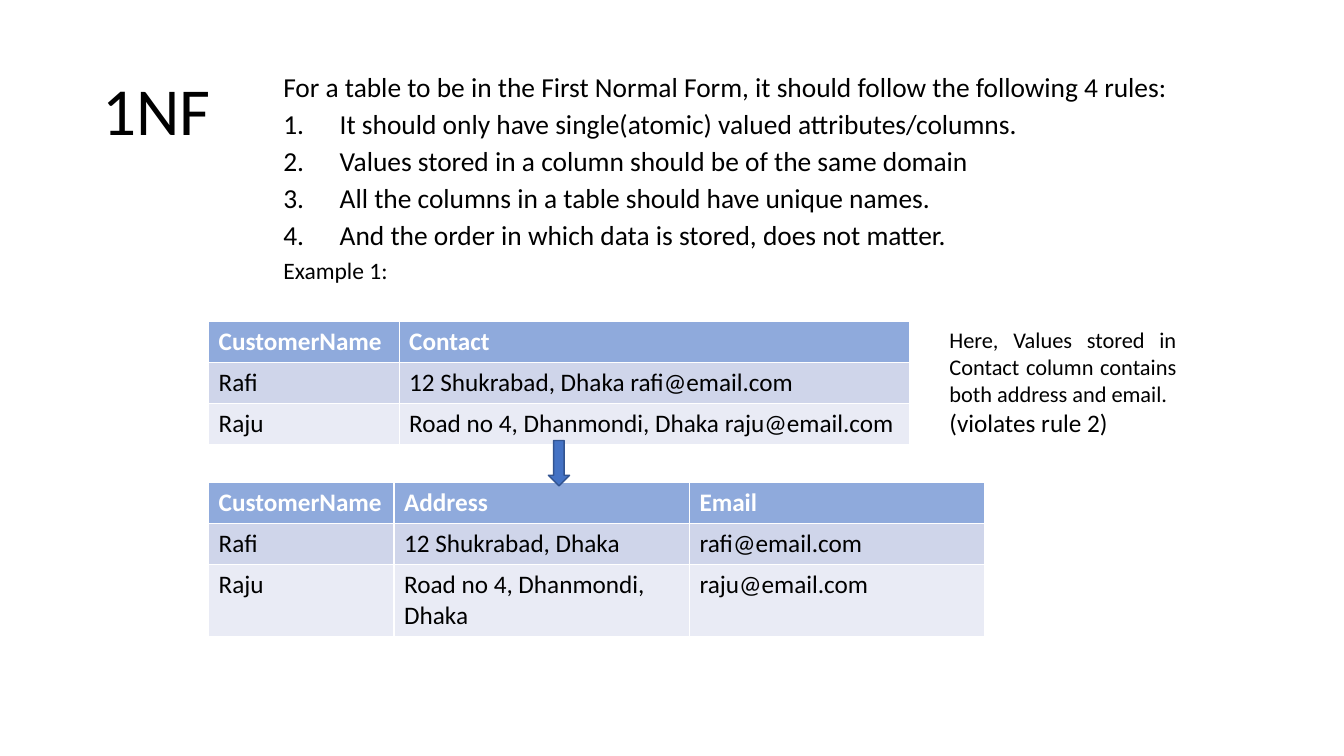
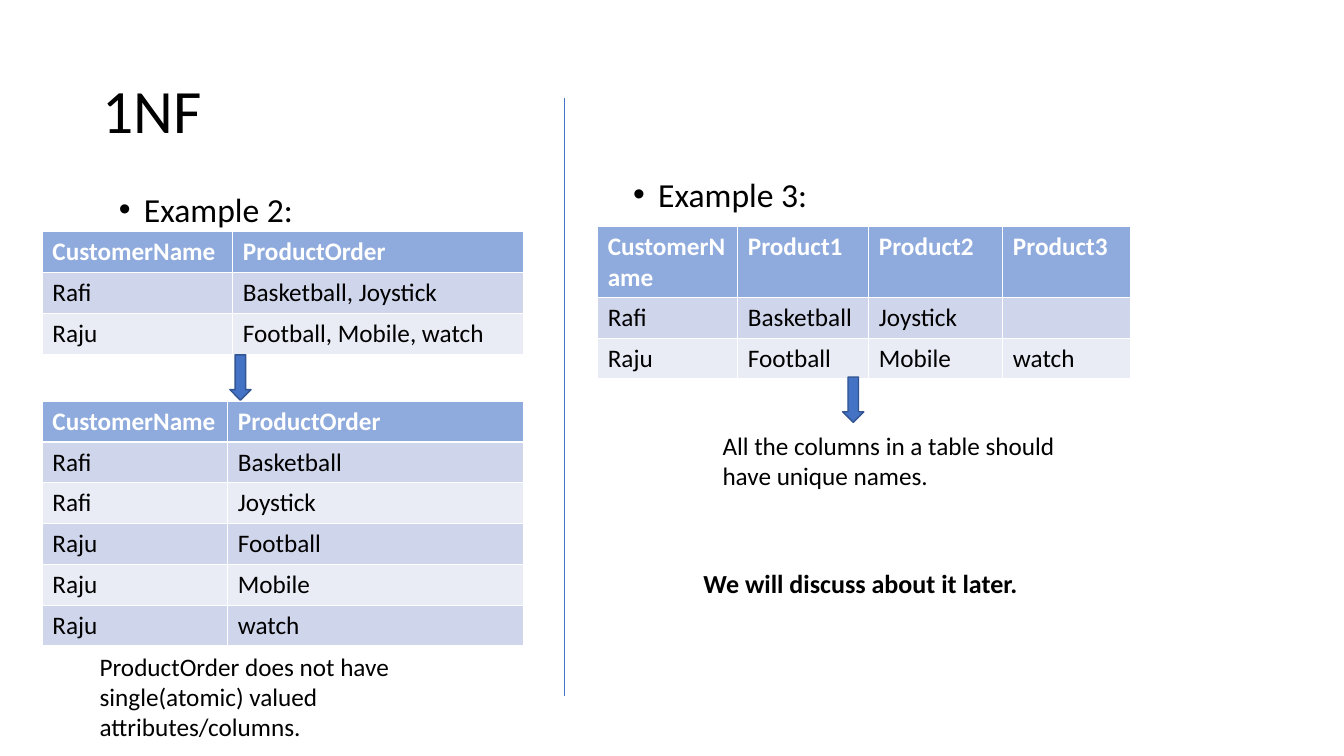
from typing import NamedTuple

from lxml import etree
from pptx import Presentation
from pptx import util as u
from pptx.dml.color import RGBColor
from pptx.enum import shapes, text
from pptx.oxml.ns import qn

BLACK = RGBColor(0x00, 0x00, 0x00)
WHITE = RGBColor(0xFF, 0xFF, 0xFF)
BLUE = RGBColor(0x44, 0x72, 0xC4)
DARK_BLUE = RGBColor(0x32, 0x54, 0x91)
HEADER_FILL = RGBColor(0x8F, 0xAA, 0xDC)
BAND_FILLS = (RGBColor(0xE9, 0xEB, 0xF5), RGBColor(0xCF, 0xD5, 0xEA))
FONT = "Calibri"

COLUMNS, ROWS = 80, 45
SLIDE_WIDTH, SLIDE_HEIGHT = u.Inches(13.33), u.Inches(7.5)
TABLE_ROW = 2.43
NAME_WIDE, NAME_NARROW, DETAIL = 11.34, 11.04, 17.58
ARROW_SIZE = (1.26, 2.7)
HEADING_SIZE = (20.4, 2.76)


def across(columns):
    """Turn grid columns into a length."""
    return u.Emu(round(SLIDE_WIDTH * columns / COLUMNS))


def down(rows):
    """Turn grid rows into a length."""
    return u.Emu(round(SLIDE_HEIGHT * rows / ROWS))


class Box(NamedTuple):
    """A region measured in grid columns and rows."""

    left: float
    top: float
    width: float
    height: float

    def inner(self, left, top, width, height):
        """Return a box placed relative to this one."""
        return Box(self.left + left, self.top + top, width, height)

    def lengths(self):
        """Return left, top, width and height as lengths."""
        return across(self.left), down(self.top), across(self.width), down(self.height)


TITLE_BOX = Box(5.5, 2.4, 69, 8.7)


def set_bullet(paragraph, bullet, indent):
    """Give a paragraph a character, automatic number or no bullet."""
    properties = paragraph._p.get_or_add_pPr()
    properties.set("marL", str(u.Inches(indent)))
    properties.set("indent", str(-u.Inches(indent)))
    if bullet == "number":
        etree.SubElement(properties, qn("a:buFont"), typeface="+mj-lt")
        etree.SubElement(properties, qn("a:buAutoNum"), type="arabicPeriod")
    elif bullet:
        etree.SubElement(properties, qn("a:buFont"), typeface="Arial")
        etree.SubElement(properties, qn("a:buChar"), char=bullet)
    else:
        etree.SubElement(properties, qn("a:buNone"))


def write(frame, words, size=18, color=BLACK, bold=False, align=text.PP_ALIGN.LEFT,
          spacing=1.0, before=0, bullet=None, indent=0):
    """Add one formatted paragraph to a text frame."""
    paragraph = frame.paragraphs[0]
    if paragraph.runs:
        paragraph = frame.add_paragraph()
    set_bullet(paragraph, bullet, indent)
    paragraph.alignment = align
    paragraph.line_spacing = spacing
    paragraph.space_before = u.Pt(before)
    run = paragraph.add_run()
    run.text = words
    run.font.name = FONT
    run.font.size = u.Pt(size)
    run.font.bold = bold
    run.font.color.rgb = color


def place(placeholder, box):
    """Move a placeholder to a box and return its text frame."""
    placeholder.left, placeholder.top, placeholder.width, placeholder.height = box.lengths()
    frame = placeholder.text_frame
    frame.word_wrap = True
    frame.auto_size = text.MSO_AUTO_SIZE.NONE
    return frame


def add_text_frame(slide, box):
    """Add a wrapping text box and return its text frame."""
    frame = slide.shapes.add_textbox(*box.lengths()).text_frame
    frame.word_wrap = True
    return frame


def add_titled_slide(presentation, title, size):
    """Add a slide with a formatted title."""
    slide = presentation.slides.add_slide(presentation.slide_layouts[1])
    frame = place(slide.shapes.title, TITLE_BOX)
    frame.vertical_anchor = text.MSO_ANCHOR.MIDDLE
    write(frame, title, size=size, spacing=0.9)
    return slide


def add_data_table(slide, region, left, top, widths, rows):
    """Add a banded table with a header row."""
    box = region.inner(left, top, sum(widths), TABLE_ROW * len(rows))
    table = slide.shapes.add_table(len(rows), len(widths), *box.lengths()).table
    for column, width in zip(table.columns, widths):
        column.width = across(width)
    for row_index, values in enumerate(rows):
        header = row_index == 0
        table.rows[row_index].height = down(TABLE_ROW)
        for column_index, value in enumerate(values):
            cell = table.cell(row_index, column_index)
            cell.fill.solid()
            cell.fill.fore_color.rgb = HEADER_FILL if header else BAND_FILLS[row_index % 2]
            if value:
                write(cell.text_frame, value, color=WHITE if header else BLACK, bold=header)


def add_down_arrow(slide, region, left, top):
    """Add a block arrow that points down."""
    box = region.inner(left, top, *ARROW_SIZE)
    arrow = slide.shapes.add_shape(shapes.MSO_SHAPE.DOWN_ARROW, *box.lengths())
    arrow.shadow.inherit = False
    arrow.fill.solid()
    arrow.fill.fore_color.rgb = BLUE
    arrow.line.color.rgb = DARK_BLUE
    arrow.line.width = u.Pt(1)


def add_divider(slide, column, top, bottom):
    """Add a vertical line between two regions."""
    line = slide.shapes.add_connector(shapes.MSO_CONNECTOR.STRAIGHT, across(column), down(top),
                                      across(column), down(bottom))
    line.line.color.rgb = BLUE
    line.line.width = u.Pt(1)
    etree.SubElement(line._element.spPr, qn("a:effectLst"))


def write_heading(frame, words):
    """Write the bulleted heading of an example."""
    write(frame, words, size=24, spacing=0.8, bullet="•", indent=0.25)


def fill_rules(slide, box):
    """Write the numbered rules of the first normal form."""
    frame = place(slide.placeholders[1], box)
    write(frame, "For a table to be in the First Normal Form, it should follow the following 4 rules:",
          size=19.6, spacing=0.7)
    for rule in ("It should only have single(atomic) valued attributes/columns.",
                 "Values stored in a column should be of the same domain",
                 "All the columns in a table should have unique names.",
                 "And the order in which data is stored, does not matter."):
        write(frame, rule, size=19.6, spacing=0.7, before=10, bullet="number", indent=0.56)
    write(frame, "Example 1:", size=16.8, spacing=0.7, before=10)


def fill_contact_example(slide, region):
    """Show a contact column split into address and email."""
    add_data_table(slide, region, 0, 0, (NAME_WIDE, 30.36), (
        ("CustomerName", "Contact"),
        ("Rafi", "12 Shukrabad, Dhaka rafi@email.com"),
        ("Raju", "Road no 4, Dhanmondi, Dhaka raju@email.com")))
    add_data_table(slide, region, 0, 9.6, (NAME_NARROW, DETAIL, DETAIL), (
        ("CustomerName", "Address", "Email"),
        ("Rafi", "12 Shukrabad, Dhaka", "rafi@email.com"),
        ("Raju", "Road no 4, Dhanmondi, Dhaka", "raju@email.com")))
    add_down_arrow(slide, region, 20.22, 7.08)
    note = add_text_frame(slide, region.inner(43.5, 0, 14.7, 7.26))
    write(note, "Here, Values stored in Contact column contains both address and email.",
          size=16, align=text.PP_ALIGN.JUSTIFY)
    write(note, "(violates rule 2)")


def fill_order_example(slide, region):
    """Show product orders split into single values."""
    write_heading(add_text_frame(slide, region.inner(3.96, 0, *HEADING_SIZE)), "Example 2:")
    header = ("CustomerName", "ProductOrder")
    add_data_table(slide, region, 0, 2.4, (NAME_WIDE, 17.28), (
        header,
        ("Rafi", "Basketball, Joystick"),
        ("Raju", "Football, Mobile, watch")))
    add_data_table(slide, region, 0, 12.48, (NAME_NARROW, DETAIL), (
        header,
        ("Rafi", "Basketball"),
        ("Rafi", "Joystick"),
        ("Raju", "Football"),
        ("Raju", "Mobile"),
        ("Raju", "watch")))
    add_down_arrow(slide, region, 11.16, 9.72)
    note = add_text_frame(slide, region.inner(2.82, 27.06, 20.58, 6.06))
    write(note, "ProductOrder does not have single(atomic) valued attributes/columns.")


def fill_column_example(slide, region):
    """Show a table with one column for each product."""
    write_heading(place(slide.placeholders[1], region.inner(1.5, 0, *HEADING_SIZE)), "Example 3:")
    add_data_table(slide, region, 0, 3, (8.34, 7.8, 7.98, 7.62), (
        ("CustomerName", "Product1", "Product2", "Product3"),
        ("Rafi", "Basketball", "Joystick", ""),
        ("Raju", "Football", "Mobile", "watch")))
    add_down_arrow(slide, region, 14.58, 11.94)
    note = add_text_frame(slide, region.inner(6.84, 14.82, 21.18, 4.26))
    write(note, "All the columns in a table should have unique names.")
    closing = add_text_frame(slide, region.inner(5.7, 23.52, *HEADING_SIZE))
    write(closing, "We will discuss about it later.", size=18.6, bold=True, spacing=0.7)


def main():
    """Build and save the presentation."""
    presentation = Presentation()
    presentation.slide_width, presentation.slide_height = SLIDE_WIDTH, SLIDE_HEIGHT

    rules_slide = add_titled_slide(presentation, "1NF", 48)
    fill_rules(rules_slide, Box(16.26, 4.38, 57.3, 13.5))
    fill_contact_example(rules_slide, Box(12.42, 19.14, 58.2, 18.7))

    examples_slide = add_titled_slide(presentation, "1NF", 44)
    fill_order_example(examples_slide, Box(2.52, 11.4, 28.62, 33.12))
    add_divider(examples_slide, 33.6, 5.82, 41.4)
    fill_column_example(examples_slide, Box(35.58, 10.5, 31.74, 26.28))

    presentation.save("out.pptx")


if __name__ == "__main__":
    main()
